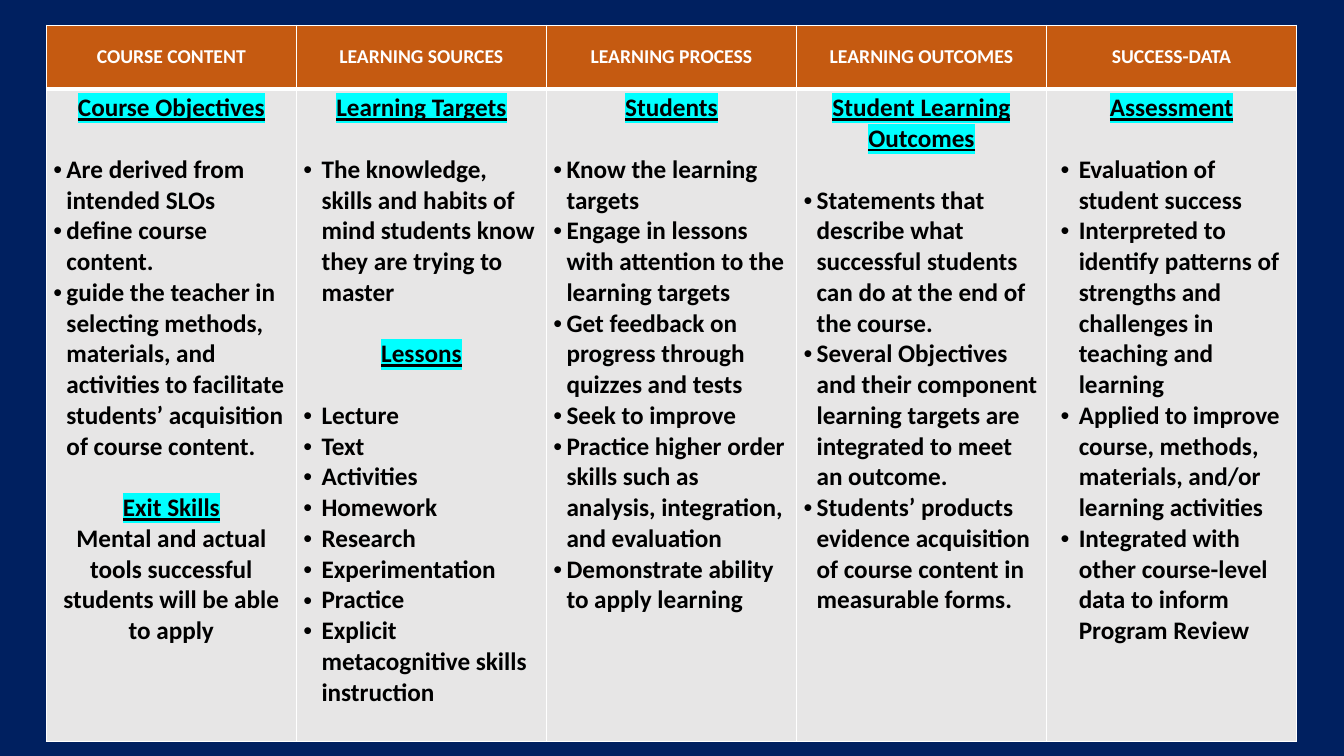
from dataclasses import dataclass

from lxml import etree
from pptx import Presentation
from pptx import util as u
from pptx.dml.color import RGBColor
from pptx.enum import text
from pptx.oxml.ns import qn


@dataclass(frozen=True)
class Theme:
    font: str = "Calibri"
    navy: str = "002060"
    orange: str = "C55A11"
    grey: str = "E7E6E6"
    white: str = "FFFFFF"
    black: str = "000000"
    cyan: str = "00FFFF"
    header_size: int = 14
    body_size: int = 18
    blank_line: int = 22
    thin: int = 1
    thick: int = 3


HEADING, BULLET, PLAIN = "heading", "bullet", "plain"


def heading(words, gap=False):
    return HEADING, words, gap


def plain(words):
    return PLAIN, words, False


def bullets(*items):
    return [(BULLET, words, index == 0) for index, words in enumerate(items)]


COLUMNS = [
    ("COURSE CONTENT", 0.13, 0.13, [
        heading("Course Objectives"),
        *bullets(
            "Are derived from intended SLOs",
            "define course content.",
            "guide the teacher in selecting methods, materials, and activities "
            "to facilitate students’ acquisition of course content.",
        ),
        heading("Exit Skills", gap=True),
        plain("Mental and actual tools successful students will be able to apply"),
    ]),
    ("LEARNING SOURCES", 0.18, 0.18, [
        heading("Learning Targets"),
        *bullets(
            "The knowledge, skills and habits of mind students know "
            "they are trying to master",
        ),
        heading("Lessons", gap=True),
        *bullets(
            "Lecture", "Text", "Activities", "Homework", "Research",
            "Experimentation", "Practice",
            "Explicit metacognitive skills instruction",
        ),
    ]),
    ("LEARNING PROCESS", 0.13, 0.13, [
        heading("Students"),
        *bullets(
            "Know the learning targets",
            "Engage in lessons with attention to the learning targets",
            "Get feedback on progress through quizzes and tests",
            "Seek to improve",
            "Practice higher order skills such as analysis, integration, "
            "and evaluation",
            "Demonstrate ability to apply learning",
        ),
    ]),
    ("LEARNING OUTCOMES", 0.13, 0.13, [
        heading("Student Learning Outcomes"),
        *bullets(
            "Statements that describe what successful students can do "
            "at the end of the course.",
            "Several Objectives and their component learning targets "
            "are integrated to meet an outcome.",
            "Students’ products evidence acquisition of course content "
            "in measurable forms.",
        ),
    ]),
    ("SUCCESS-DATA", 0.25, 0.18, [
        heading("Assessment"),
        *bullets(
            "Evaluation of student success",
            "Interpreted to identify patterns of strengths and challenges "
            "in teaching and learning",
            "Applied to improve course, methods, materials, "
            "and/or learning activities",
            "Integrated with other course-level data to inform Program Review",
        ),
    ]),
]


class SlideBuilder:
    def __init__(self, page, theme):
        self.page = page
        self.theme = theme

    def background(self, colour):
        fill = self.page.background.fill
        fill.solid()
        fill.fore_color.rgb = RGBColor.from_string(colour)

    def table(self, left, top, widths, heights):
        frame = self.page.shapes.add_table(
            len(heights), len(widths), u.Inches(left), u.Inches(top),
            u.Inches(sum(widths)), u.Inches(sum(heights)))
        grid = frame.table
        grid.horz_banding = False
        for column, width in zip(grid.columns, widths):
            column.width = u.Inches(width)
        for row, height in zip(grid.rows, heights):
            row.height = u.Inches(height)
        return grid

    def cell(self, cell, colour, anchor, borders):
        formats = {
            "margin_left": u.Inches(0.07), "margin_right": u.Inches(0.07),
            "margin_top": u.Inches(0.04), "margin_bottom": u.Inches(0.04),
            "vertical_anchor": anchor,
        }
        for name, value in formats.items():
            setattr(cell, name, value)
        cell.fill.solid()
        cell.fill.fore_color.rgb = RGBColor.from_string(colour)
        properties = cell._tc.get_or_add_tcPr()
        for index, (side, weight) in enumerate(zip("LRTB", borders)):
            line = etree.Element(qn(f"a:ln{side}"), w=str(u.Pt(weight)))
            fill = etree.SubElement(line, qn("a:solidFill"))
            etree.SubElement(fill, qn("a:srgbClr"), val=self.theme.white)
            properties.insert(index, line)

    def add_words(self, para, words, size, colour, marked=False):
        span = para.add_run()
        span.text = words
        formats = {"name": self.theme.font, "size": u.Pt(size),
                   "bold": True, "underline": marked}
        for name, value in formats.items():
            setattr(span.font, name, value)
        span.font.color.rgb = RGBColor.from_string(colour)
        if marked:
            highlight = etree.Element(qn("a:highlight"))
            etree.SubElement(highlight, qn("a:srgbClr"), val=self.theme.cyan)
            span._r.get_or_add_rPr().find(qn("a:latin")).addprevious(highlight)

    def bullet(self, para, margin, hang):
        properties = para._p.get_or_add_pPr()
        properties.set("marL", str(u.Inches(margin)))
        properties.set("indent", str(-u.Inches(hang)))
        etree.SubElement(properties, qn("a:buFont"), typeface="Arial")
        etree.SubElement(properties, qn("a:buChar"), char="•")

    def header_cell(self, cell, words):
        theme = self.theme
        self.cell(cell, theme.orange, text.MSO_ANCHOR.MIDDLE,
                  [theme.thin] * 3 + [theme.thick])
        para = cell.text_frame.paragraphs[0]
        para.alignment = text.PP_ALIGN.CENTER
        self.add_words(para, words, theme.header_size, theme.white)

    def body_cell(self, cell, margin, hang, content):
        theme = self.theme
        self.cell(cell, theme.grey, text.MSO_ANCHOR.TOP,
                  [theme.thin, theme.thin, theme.thick, theme.thin])
        box = cell.text_frame
        for index, (kind, words, gap) in enumerate(content):
            para = box.add_paragraph() if index else box.paragraphs[0]
            if gap:
                para.space_before = u.Pt(theme.blank_line)
            if kind == BULLET:
                self.bullet(para, margin, hang)
            else:
                para.alignment = text.PP_ALIGN.CENTER
            self.add_words(para, words, theme.body_size, theme.black,
                           kind == HEADING)


def main():
    deck = Presentation()
    deck.slide_width, deck.slide_height = u.Inches(13.33), u.Inches(7.5)
    theme = Theme()
    builder = SlideBuilder(deck.slides.add_slide(deck.slide_layouts[6]), theme)
    builder.background(theme.navy)
    grid = builder.table(0.46, 0.25, [2.48] * len(COLUMNS), [0.63, 6.48])
    for index, (title, margin, hang, content) in enumerate(COLUMNS):
        builder.header_cell(grid.cell(0, index), title)
        builder.body_cell(grid.cell(1, index), margin, hang, content)
    deck.save("out.pptx")


if __name__ == "__main__":
    main()
